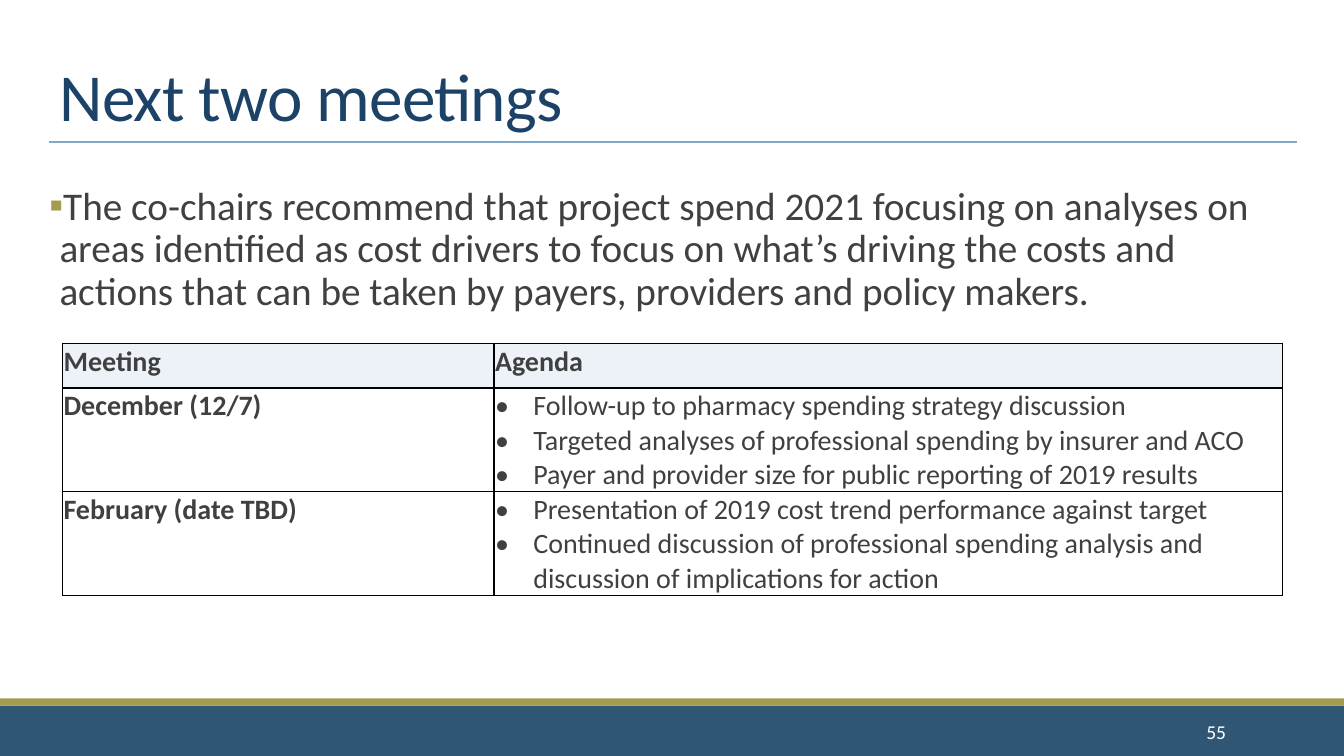
import pptx
import pptx.util
import pptx.dml.color
import pptx.enum.shapes
import pptx.enum.text
import pptx.oxml
import pptx.oxml.ns
import lxml.etree

Inches, Pt = pptx.util.Inches, pptx.util.Pt
RGBColor = pptx.dml.color.RGBColor
ALIGN = pptx.enum.text.PP_ALIGN
ANCHOR = pptx.enum.text.MSO_ANCHOR

# Content
TITLE = "Next two meetings"
INTRO = ("The co-chairs recommend that project spend 2021 focusing on analyses on "
         "areas identified as cost drivers to focus on what’s driving the costs and "
         "actions that can be taken by payers, providers and policy makers.")
HEADS = ["Meeting", "Agenda"]
MEETINGS = [
    ("December (12/7)", [
        "Follow-up to pharmacy spending strategy discussion",
        "Targeted analyses of professional spending by insurer and ACO",
        "Payer and provider size for public reporting of 2019 results"]),
    ("February (date TBD)", [
        "Presentation of 2019 cost trend performance against target",
        "Continued discussion of professional spending analysis and "
        "discussion of implications for action"]),
]
NUMBER = "55"

# Look
FONT = "Calibri"
NAVY = RGBColor(0x1D, 0x42, 0x68)
BLUE = RGBColor(0x2F, 0x56, 0x74)
OLIVE = RGBColor(0xA3, 0x9B, 0x4E)
SKY = RGBColor(0x7E, 0xA9, 0xCA)
PALE = RGBColor(0xED, 0xF2, 0xF9)
GRAY = RGBColor(0x40, 0x40, 0x40)
BLACK = RGBColor(0, 0, 0)
WHITE = RGBColor(255, 255, 255)

# Layout in inches
WIDE, HIGH = 13.33, 7.5
LEFT, SPAN = 0.49, 12.37
RULE = 1.41
COLS = [4.28, 7.82]
ROWS = [0.44, 1.03, 1.03]


def place(shape, left, top, width, height):
    shape.left, shape.top = Inches(left), Inches(top)
    shape.width, shape.height = Inches(width), Inches(height)


def write(para, text, size, color, bold=False):
    run = para.add_run()
    run.text = text
    font = run.font
    font.name, font.size, font.bold = FONT, Pt(size), bold
    font.color.rgb = color
    return run


def add_xml(parent, body):
    space = pptx.oxml.ns.nsdecls("a")
    root = pptx.oxml.parse_xml(f"<a:root {space}>{body}</a:root>")
    for node in list(root):
        parent.append(node)


def bullet(para, mark, indent, color):
    props = para._p.get_or_add_pPr()
    props.set("marL", str(Inches(indent)))
    props.set("indent", str(-Inches(indent)))
    add_xml(props, f'<a:buClr><a:srgbClr val="{color}"/></a:buClr>'
                   f'<a:buFont typeface="{FONT}"/><a:buChar char="{mark}"/>')


def border(cell):
    props = cell._tc.get_or_add_tcPr()
    for side in "LRTB":
        add_xml(props, f'<a:ln{side} w="{Pt(1)}"><a:solidFill>'
                       f'<a:srgbClr val="{BLACK}"/></a:solidFill></a:ln{side}>')


def fill_cell(cell, lines, bold, marked, shade):
    cell.margin_left = cell.margin_right = cell.margin_top = Inches(0.01)
    cell.margin_bottom = 0
    border(cell)
    if shade:
        cell.fill.solid()
        cell.fill.fore_color.rgb = PALE
    else:
        cell.fill.background()
    frame = cell.text_frame
    for i, line in enumerate(lines):
        para = frame.add_paragraph() if i else frame.paragraphs[0]
        if marked:
            bullet(para, "•", 0.38, GRAY)
        write(para, line, 20, GRAY, bold)


def main():
    deck = pptx.Presentation()
    deck.slide_width, deck.slide_height = Inches(WIDE), Inches(HIGH)
    slide = deck.slides.add_slide(deck.slide_layouts[1])
    shapes = slide.shapes
    title, body = shapes.title, slide.placeholders[1]

    # Title
    place(title, LEFT, 0.31, SPAN, 1.08)
    frame = title.text_frame
    frame.vertical_anchor = ANCHOR.BOTTOM
    frame.auto_size = pptx.enum.text.MSO_AUTO_SIZE.NONE
    para = frame.paragraphs[0]
    para.alignment, para.line_spacing = ALIGN.LEFT, 0.85
    run = write(para, TITLE, 48, NAVY)
    run.font._element.set("spc", "-50")

    # Recommendation
    place(body, LEFT, 1.8, SPAN, 5.26)
    frame = body.text_frame
    frame.auto_size = pptx.enum.text.MSO_AUTO_SIZE.NONE
    frame.margin_left = frame.margin_right = 0
    para = frame.paragraphs[0]
    para.line_spacing = 0.9
    para.space_before, para.space_after = Pt(12), Pt(2)
    bullet(para, "▪", 0.1, OLIVE)
    write(para, INTRO, 28, GRAY)

    # Footer bands
    for top, height, color in [(7, 0.5, BLUE), (6.93, 0.07, OLIVE)]:
        band = shapes.add_shape(pptx.enum.shapes.MSO_SHAPE.RECTANGLE, 0,
                                Inches(top), Inches(WIDE), Inches(height))
        band.shadow.inherit = False
        band.fill.solid()
        band.fill.fore_color.rgb = color
        band.line.fill.background()

    # Title rule
    rule = shapes.add_connector(pptx.enum.shapes.MSO_CONNECTOR.STRAIGHT,
                                Inches(LEFT), Inches(RULE),
                                Inches(LEFT + SPAN), Inches(RULE))
    rule.line.color.rgb, rule.line.width = SKY, Pt(1)
    add_xml(rule._element.spPr, "<a:effectLst/>")

    # Slide number
    box = shapes.add_textbox(Inches(10.83), Inches(7.06), Inches(1.43), Inches(0.4))
    frame = box.text_frame
    frame.word_wrap, frame.vertical_anchor = True, ANCHOR.MIDDLE
    para = frame.paragraphs[0]
    para.alignment = ALIGN.RIGHT
    write(para, NUMBER, 14, WHITE)

    # Meeting table
    grid = shapes.add_table(len(ROWS), len(COLS), Inches(0.62), Inches(3.41),
                            Inches(sum(COLS)), Inches(sum(ROWS))).table
    grid.first_row = grid.horz_banding = False
    for col, width in zip(grid.columns, COLS):
        col.width = Inches(width)
    for row, height in zip(grid.rows, ROWS):
        row.height = Inches(height)
    for c, head in enumerate(HEADS):
        fill_cell(grid.cell(0, c), [head], True, False, True)
    for r, (date, items) in enumerate(MEETINGS, 1):
        fill_cell(grid.cell(r, 0), [date], True, False, False)
        fill_cell(grid.cell(r, 1), items, False, True, False)

    deck.save("out.pptx")


if __name__ == "__main__":
    main()
